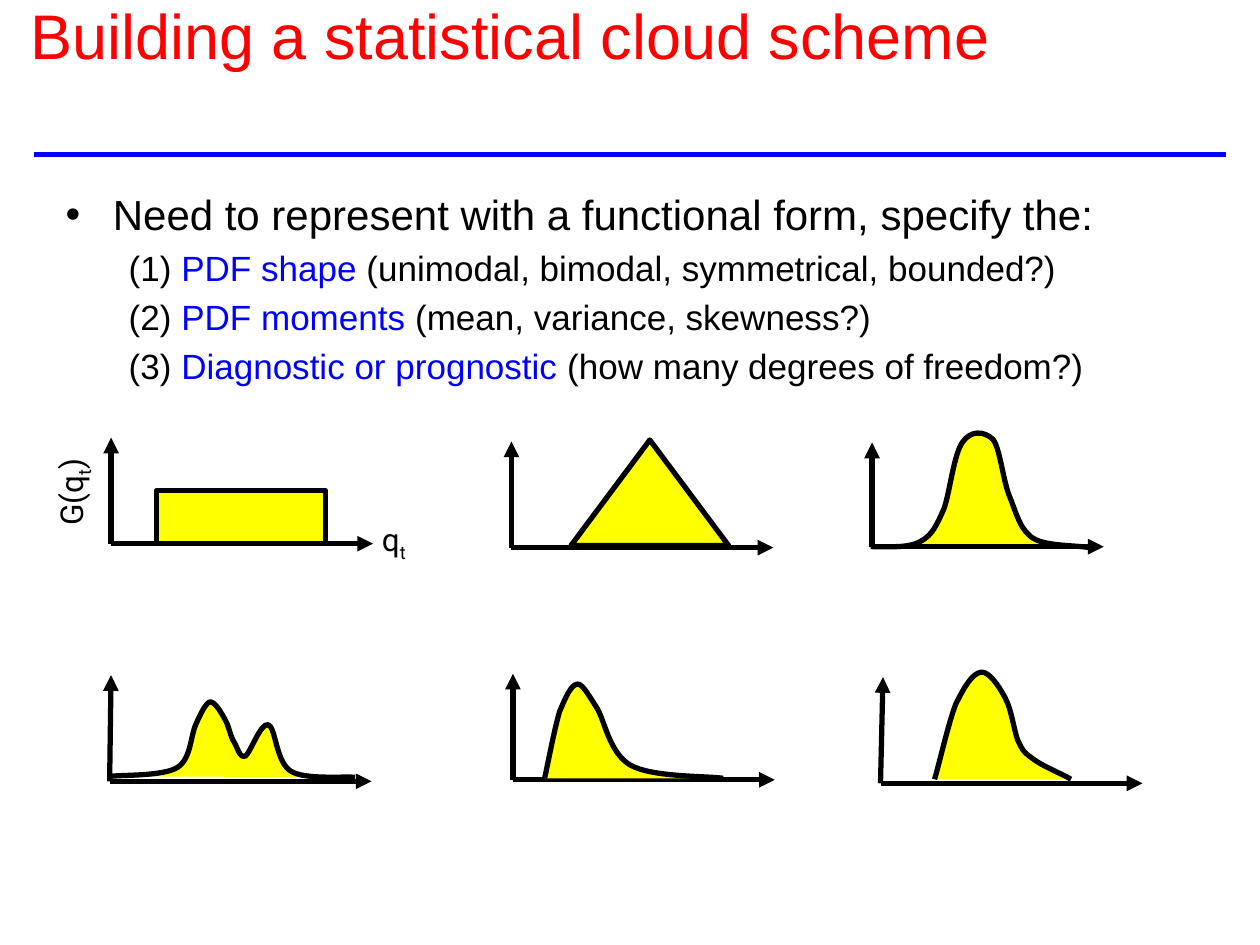
"""Build a slide on the choice of PDF for a statistical cloud scheme."""
import lxml.etree
import pptx
import pptx.dml.color
import pptx.enum.shapes
import pptx.enum.text
import pptx.oxml.ns
import pptx.util

Cm = pptx.util.Cm
Pt = pptx.util.Pt
RGBColor = pptx.dml.color.RGBColor
MSO_SHAPE = pptx.enum.shapes.MSO_SHAPE
PP_ALIGN = pptx.enum.text.PP_ALIGN
MSO_ANCHOR = pptx.enum.text.MSO_ANCHOR
MSO_AUTO_SIZE = pptx.enum.text.MSO_AUTO_SIZE
qn = pptx.oxml.ns.qn

RED = RGBColor(0xFF, 0x00, 0x00)
BLUE = RGBColor(0x00, 0x00, 0xFF)
BLACK = RGBColor(0x00, 0x00, 0x00)
YELLOW = RGBColor(0xFF, 0xFF, 0x00)

AXIS_WIDTH, AXIS_HEIGHT = 5.28, 2.14
TITLE_SIZE = 36

ASPECTS = [
    ("(1) ", "PDF shape ", "(unimodal, bimodal, symmetrical, bounded?)"),
    ("(2) ", "PDF moments ", "(mean, variance, skewness?)"),
    ("(3) ", "Diagnostic or prognostic ", "(how many degrees of freedom?)"),
]

SKEWED = [
    (0.64, 0.03), (0.69, 0.25), (0.84, 1.04), (0.94, 1.37),
    (1.07, 1.68), (1.17, 1.91), (1.3, 1.93),
    (1.4, 1.93), (1.5, 1.75), (1.68, 1.47),
    (1.85, 1.22), (1.93, 0.56), (2.36, 0.3),
    (2.79, 0.05), (3.86, 0.08), (4.24, 0.03),
]
BIMODAL = [
    (0.03, 0.1), (0.25, 0.13), (1.09, 0.1), (1.37, 0.28),
    (1.65, 0.46), (1.63, 0.94), (1.75, 1.17),
    (1.85, 1.4), (1.96, 1.6), (2.03, 1.6),
    (2.13, 1.6), (2.26, 1.37), (2.34, 1.22),
    (2.41, 1.09), (2.44, 0.89), (2.51, 0.79),
    (2.59, 0.66), (2.62, 0.46), (2.74, 0.51),
    (2.84, 0.58), (3.05, 1.19), (3.2, 1.14),
    (3.35, 1.09), (3.35, 0.38), (3.66, 0.2),
    (3.94, 0.03), (4.7, 0.1), (4.95, 0.08),
]
BELL = [
    (-0.03, 0), (0.36, 0), (0.74, -0.03), (0.97, 0.1),
    (1.22, 0.23), (1.3, 0.43), (1.45, 0.76),
    (1.57, 1.09), (1.65, 1.88), (1.83, 2.11),
    (1.98, 2.34), (2.26, 2.34), (2.44, 2.16),
    (2.59, 1.96), (2.64, 1.3), (2.79, 0.97),
    (2.92, 0.64), (3, 0.3), (3.28, 0.15),
    (3.56, 0), (4.19, 0.03), (4.42, -0.03),
]
BOUNDED = [
    (1.09, 0.08), (1.17, 0.33), (1.37, 1.22), (1.52, 1.6),
    (1.7, 1.96), (1.85, 2.21), (2.03, 2.24),
    (2.18, 2.26), (2.39, 1.96), (2.51, 1.73),
    (2.64, 1.5), (2.69, 1.07), (2.77, 0.86),
    (2.87, 0.66), (2.87, 0.64), (3.05, 0.51),
    (3.23, 0.36), (3.68, 0.18), (3.84, 0.08),
]


def add_run(paragraph, text, size, color, font="Arial", baseline=0):
    """Append one formatted run."""
    run = paragraph.add_run()
    run.text = text
    run.font.size = Pt(size)
    run.font.name = font
    run.font.color.rgb = color
    if baseline:
        run.font._element.set("baseline", str(baseline * 1000))


def add_line(shapes, start, end, color=BLACK, arrow=False):
    """Draw a straight line between two points in centimetres."""
    line = shapes.add_connector(pptx.enum.shapes.MSO_CONNECTOR.STRAIGHT,
                                *map(Cm, (*start, *end)))
    line.line.color.rgb = color
    line.line.width = Pt(3)
    if arrow:
        lxml.etree.SubElement(line.line._get_or_add_ln(), qn("a:tailEnd"), type="triangle")
    lxml.etree.SubElement(line._element.spPr, qn("a:effectLst"))


def add_axes(shapes, origin, tip_shift=0, width=AXIS_WIDTH, height=AXIS_HEIGHT):
    """Draw the upright and the level axis of one plot."""
    x, y = origin
    add_line(shapes, origin, (x + tip_shift, y - height), arrow=True)
    add_line(shapes, origin, (x + width, y), arrow=True)


def style_density(density):
    """Give a density its yellow area and black outline."""
    density.shadow.inherit = False
    density.fill.solid()
    density.fill.fore_color.rgb = YELLOW
    density.line.color.rgb = BLACK
    density.line.width = Pt(3)


def add_preset_density(shapes, preset, *frame):
    """Draw a density that has a preset outline."""
    style_density(shapes.add_shape(preset, *map(Cm, frame)))


def bend_segments(density):
    """Turn each three straight segments into one cubic curve."""
    segments = list(density._element.iter(qn("a:lnTo")))
    for first in range(0, len(segments), 3):
        curve = lxml.etree.Element(qn("a:cubicBezTo"))
        segments[first].addprevious(curve)
        for segment in segments[first:first + 3]:
            curve.append(segment[0])
            segment.getparent().remove(segment)


def add_curve_density(shapes, origin, controls):
    """Draw a smooth open density, its heights measured up from the origin."""
    vertices = [(Cm(origin[0] + x), Cm(origin[1] - y)) for x, y in controls]
    builder = shapes.build_freeform(*vertices[0])
    builder.add_line_segments(vertices[1:], close=False)
    density = builder.convert_to_shape()
    bend_segments(density)
    style_density(density)


def add_axis_label(shapes, frame, parts, rotation=0, wrap=True):
    """Write a centred axis label from (text, baseline) parts."""
    label = shapes.add_textbox(*map(Cm, frame))
    label.rotation = rotation
    text = label.text_frame
    text.word_wrap = wrap
    text.vertical_anchor = MSO_ANCHOR.MIDDLE
    text.paragraphs[0].alignment = PP_ALIGN.CENTER
    for part, baseline in parts:
        add_run(text.paragraphs[0], part, 18, BLACK, "Roboto", baseline)


def place(placeholder, anchor, *frame):
    """Move a placeholder and return its anchored text frame."""
    placeholder.left, placeholder.top, placeholder.width, placeholder.height = map(Cm, frame)
    text = placeholder.text_frame
    text.auto_size = MSO_AUTO_SIZE.NONE
    text.vertical_anchor = anchor
    return text


def set_indent(paragraph, left, first):
    """Set the left and first-line indents in centimetres."""
    properties = paragraph._p.get_or_add_pPr()
    properties.set("marL", str(Cm(left)))
    properties.set("indent", str(Cm(first)))
    return properties


def fill_title(title):
    """Write the slide title with its closing line break."""
    heading = place(title, MSO_ANCHOR.MIDDLE, 0.36, 0.28, 20.32, 2.34).paragraphs[0]
    heading.alignment = PP_ALIGN.LEFT
    add_run(heading, "Building a statistical cloud scheme", TITLE_SIZE, RED)
    heading.add_line_break()
    size = str(TITLE_SIZE * 100)
    lxml.etree.SubElement(heading._p[-1], qn("a:rPr"), sz=size)
    lxml.etree.SubElement(heading._p, qn("a:endParaRPr"), sz=size)


def fill_body(body):
    """Write the list of things to specify."""
    text = place(body, MSO_ANCHOR.TOP, 1.07, 3.68, 23.62, 12.95)
    need = text.paragraphs[0]
    set_indent(need, 0.95, -0.95)
    need.space_before = Pt(0)
    add_run(need, "Need to represent with a functional form, specify the:", 24, BLACK)
    for parts in ASPECTS:
        aspect = text.add_paragraph()
        aspect.level = 1
        lxml.etree.SubElement(set_indent(aspect, 2.06, -0.79), qn("a:buNone"))
        for part, color in zip(parts, (BLACK, BLUE, BLACK)):
            add_run(aspect, part, 20, color)


def main():
    """Build and save the slide."""
    deck = pptx.Presentation()
    deck.slide_width, deck.slide_height = Cm(25.4), Cm(19.05)
    slide = deck.slides.add_slide(deck.slide_layouts[1])
    add_line(slide.shapes, (0.69, 3.12), (24.71, 3.12), BLUE)
    fill_title(slide.shapes.title)
    fill_body(slide.placeholders[1])

    skewed, bimodal, triangular, uniform, bell, bounded = (
        slide.shapes.add_group_shape().shapes for _ in range(6))
    add_axes(skewed, (10.34, 15.72))
    add_curve_density(skewed, (10.34, 15.72), SKEWED)
    add_curve_density(bimodal, (2.21, 15.75), BIMODAL)
    add_axes(bimodal, (2.21, 15.75), tip_shift=0.03)
    add_axes(triangular, (10.31, 11.04))
    add_preset_density(triangular, MSO_SHAPE.ISOSCELES_TRIANGLE, 11.51, 8.87, 3.18, 2.13)
    add_axes(uniform, (2.24, 10.96))
    add_axis_label(uniform, (7.32, 10.27, 1.24, 1.3), [("q", 0), ("t", -25)])
    add_axis_label(uniform, (0.28, 9.27, 2.39, 1.3), [("G(q", 0), ("t", -25), (")", 0)], 270, False)
    add_preset_density(uniform, MSO_SHAPE.RECTANGLE, 3.15, 9.89, 3.41, 1.07)
    add_curve_density(bell, (17.58, 11.02), BELL)
    add_axes(bell, (17.58, 11.02), width=4.67, height=2.1)
    add_axes(bounded, (17.75, 15.79), tip_shift=0.05)
    add_curve_density(bounded, (17.75, 15.79), BOUNDED)
    deck.save("out.pptx")


if __name__ == "__main__":
    main()
